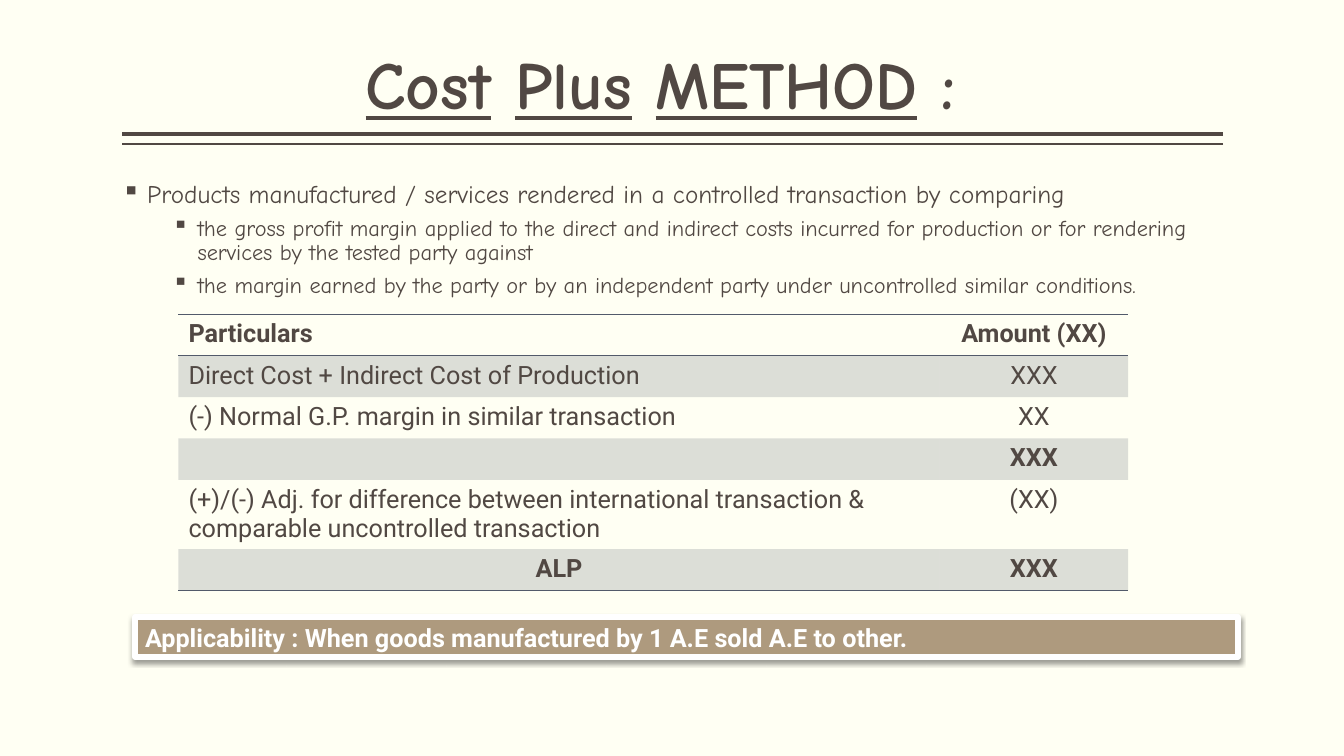
from dataclasses import dataclass

from lxml.etree import SubElement
from pptx import Presentation
from pptx.dml.color import RGBColor
from pptx.enum.shapes import MSO_CONNECTOR, MSO_SHAPE
from pptx.enum.text import MSO_ANCHOR, MSO_AUTO_SIZE, PP_ALIGN
from pptx.oxml.ns import qn
from pptx.util import Inches, Pt

CREAM = RGBColor(0xFF, 0xFF, 0xF3)
BROWN = RGBColor(0x51, 0x48, 0x43)
SLATE = RGBColor(0x52, 0x5A, 0x6A)
TAN = RGBColor(0xAE, 0x9A, 0x7E)
WHITE = RGBColor(0xFF, 0xFF, 0xFF)
BLACK = RGBColor(0, 0, 0)

HAND_FONT = "Comic Neue"
PLAIN_FONT = "Roboto"
NO_STYLE_TABLE = "{2D5ABB26-0587-4C30-8999-92F81FD0307C}"
LEFT, WIDTH = 1.21, 10.92
ROW_HEIGHT = 0.41
COLUMN_WIDTHS = (7.55, 1.87)


@dataclass(frozen=True)
class Rule:
    top: float
    weight: float


@dataclass(frozen=True)
class Bullet:
    text: str
    size: float
    level: int
    margin: float
    space_before: float


@dataclass(frozen=True)
class CostRow:
    label: str
    amount: str
    bold: bool = False
    label_alignment: PP_ALIGN = PP_ALIGN.LEFT


RULES = (Rule(1.33, 3), Rule(1.43, 1))
TITLE_PARTS = (("Cost", True), (" ", False), ("Plus", True), (" ", False),
               ("METHOD", True), (" : ", False))
BULLETS = (
    Bullet("Products manufactured / services rendered in a controlled transaction by comparing",
           18, 0, 0.25, 18),
    Bullet("the gross profit margin applied to the direct and indirect costs incurred for "
           "production or for rendering services by the tested party against", 16, 1, 0.75, 6),
    Bullet("the margin earned by the party or by an independent party under uncontrolled "
           "similar conditions.", 16, 1, 0.75, 6),
)
COST_ROWS = (
    CostRow("Particulars", "Amount (XX)", True),
    CostRow("Direct Cost + Indirect Cost of Production", "XXX"),
    CostRow("(-) Normal G.P. margin in similar transaction", "XX"),
    CostRow("", "XXX", True),
    CostRow("(+)/(-) Adj. for difference between international transaction & "
            "comparable uncontrolled transaction", "(XX)"),
    CostRow("ALP", "XXX", True, PP_ALIGN.CENTER),
)


def add_run(paragraph, text: str, color: RGBColor, **font_values) -> None:
    run = paragraph.add_run()
    run.text = text
    run.font.color.rgb = color
    for name, value in font_values.items():
        setattr(run.font, name, value)


def set_frame(frame, **extra) -> None:
    values = {"word_wrap": True, "auto_size": MSO_AUTO_SIZE.NONE,
              "margin_left": 0, "margin_right": 0,
              "margin_top": Inches(0.05), "margin_bottom": Inches(0.05), **extra}
    for name, value in values.items():
        setattr(frame, name, value)


def place(shape, left: float, top: float, width: float, height: float) -> None:
    values = {"left": left, "top": top, "width": width, "height": height}
    for name, value in values.items():
        setattr(shape, name, Inches(value))


def add_color(parent, color: RGBColor, alpha: int = 100) -> None:
    node = SubElement(parent, qn("a:srgbClr"), val=str(color))
    if alpha < 100:
        SubElement(node, qn("a:alpha"), val=str(alpha * 1000))


def add_rule(slide, rule: Rule) -> None:
    line = slide.shapes.add_connector(
        MSO_CONNECTOR.STRAIGHT, Inches(LEFT + WIDTH), Inches(rule.top),
        Inches(LEFT), Inches(rule.top))
    line.line.color.rgb = BROWN
    line.line.width = Pt(rule.weight)
    SubElement(line._element.spPr, qn("a:effectLst"))


def add_title(slide) -> None:
    title = slide.shapes.title
    place(title, LEFT, 0.08, WIDTH, 1.2)
    set_frame(title.text_frame, vertical_anchor=MSO_ANCHOR.BOTTOM)
    paragraph = title.text_frame.paragraphs[0]
    paragraph.alignment = PP_ALIGN.CENTER
    paragraph.line_spacing = 0.9
    for text, underline in TITLE_PARTS:
        add_run(paragraph, text, BROWN, name=HAND_FONT, size=Pt(48),
                bold=True, underline=underline)


def add_bullets(slide) -> None:
    box = slide.shapes.add_textbox(Inches(LEFT), Inches(1.75), Inches(WIDTH), Inches(5))
    frame = box.text_frame
    set_frame(frame)
    for index, bullet in enumerate(BULLETS):
        paragraph = frame.add_paragraph() if index else frame.paragraphs[0]
        values = {"level": bullet.level, "line_spacing": 0.9,
                  "space_before": Pt(bullet.space_before)}
        for name, value in values.items():
            setattr(paragraph, name, value)
        properties = paragraph._p.get_or_add_pPr()
        properties.set("marL", str(Inches(bullet.margin)))
        properties.set("indent", str(Inches(-0.25)))
        SubElement(properties, qn("a:buChar"), char="▪")
        add_run(paragraph, bullet.text, BROWN, name=HAND_FONT, size=Pt(bullet.size))


def add_border(cell, tag: str, position: int) -> None:
    properties = cell._tc.get_or_add_tcPr()
    border = SubElement(properties, qn(tag), w=str(Pt(1)))
    add_color(SubElement(border, qn("a:solidFill")), SLATE)
    properties.insert(position, border)


def add_cost_table(slide) -> None:
    table = slide.shapes.add_table(
        len(COST_ROWS), len(COLUMN_WIDTHS), Inches(1.77), Inches(3.12),
        Inches(sum(COLUMN_WIDTHS)), Inches(ROW_HEIGHT * len(COST_ROWS))).table
    table.first_row = table.horz_banding = False
    table._tbl.tblPr.find(qn("a:tableStyleId")).text = NO_STYLE_TABLE
    for column, width in zip(table.columns, COLUMN_WIDTHS):
        column.width = Inches(width)
    last = len(COST_ROWS) - 1
    for index, row in enumerate(COST_ROWS):
        table.rows[index].height = Inches(ROW_HEIGHT)
        contents = ((row.label, row.label_alignment), (row.amount, PP_ALIGN.CENTER))
        for cell, (text, alignment) in zip(table.rows[index].cells, contents):
            paragraph = cell.text_frame.paragraphs[0]
            paragraph.alignment = alignment
            if text:
                add_run(paragraph, text, BROWN, name=PLAIN_FONT, size=Pt(18), bold=row.bold)
            # Borders come before the fill in the cell properties
            if index == 0:
                add_border(cell, "a:lnT", 0)
            if index in (0, last):
                add_border(cell, "a:lnB", 0 if index else 1)
            if index % 2:
                fill = SubElement(cell._tc.get_or_add_tcPr(), qn("a:solidFill"))
                add_color(fill, SLATE, 20)
            else:
                cell.fill.background()


def add_applicability(slide) -> None:
    banner = slide.shapes.add_shape(
        MSO_SHAPE.RECTANGLE, Inches(1.34), Inches(6.12), Inches(10.94), Inches(0.4))
    banner.fill.solid()
    banner.fill.fore_color.rgb = TAN
    banner.line.color.rgb = WHITE
    banner.line.width = Pt(3.82)
    banner.shadow.inherit = False
    shadow = SubElement(
        banner._element.spPr.find(qn("a:effectLst")), qn("a:outerShdw"),
        blurRad=str(Pt(3.5)), dist=str(Pt(2)), dir=str(90 * 60000), rotWithShape="0")
    add_color(shadow, BLACK, 38)
    set_frame(banner.text_frame, auto_size=MSO_AUTO_SIZE.SHAPE_TO_FIT_TEXT,
              vertical_anchor=MSO_ANCHOR.TOP,
              margin_left=Inches(0.1), margin_right=Inches(0.1))
    paragraph = banner.text_frame.paragraphs[0]
    paragraph.alignment = PP_ALIGN.LEFT
    add_run(paragraph, "Applicability : When goods manufactured by 1 A.E sold A.E to other.",
            WHITE, name=PLAIN_FONT, size=Pt(18), bold=True)


def main() -> None:
    presentation = Presentation()
    presentation.slide_width = Inches(13.33)
    presentation.slide_height = Inches(7.5)
    slide = presentation.slides.add_slide(presentation.slide_layouts.get_by_name("Title Only"))
    slide.background.fill.solid()
    slide.background.fill.fore_color.rgb = CREAM

    # Heading with its double rule
    for rule in RULES:
        add_rule(slide, rule)
    add_title(slide)

    # Explanation, computation and applicability
    add_bullets(slide)
    add_cost_table(slide)
    add_applicability(slide)
    presentation.save("out.pptx")


if __name__ == "__main__":
    main()
